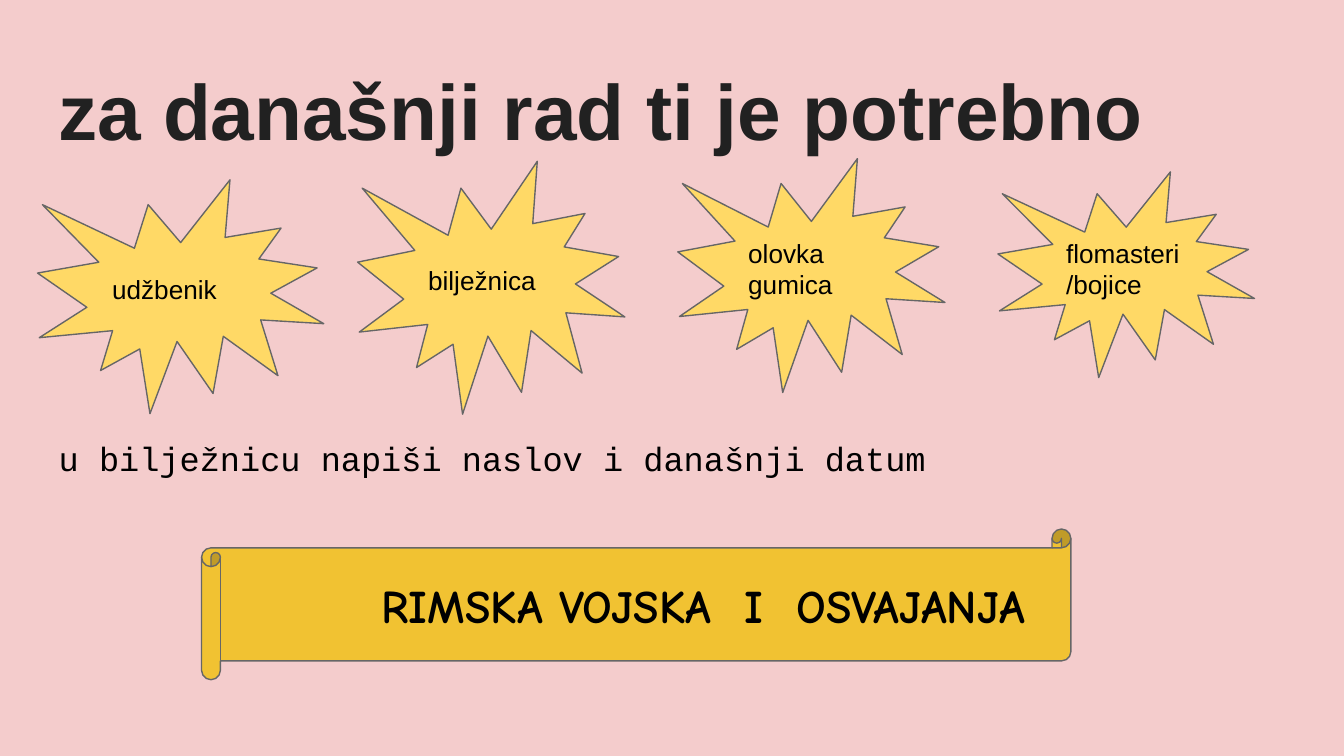
from pptx import Presentation
from pptx.dml.color import RGBColor
from pptx.enum.shapes import MSO_SHAPE
from pptx.enum.text import MSO_ANCHOR, PP_ALIGN
from pptx.util import Cm, Pt

PINK = RGBColor(0xF4, 0xCC, 0xCC)
YELLOW = RGBColor(0xFF, 0xD9, 0x66)
GOLD = RGBColor(0xF1, 0xC2, 0x32)
GREY = RGBColor(0x66, 0x66, 0x66)
DARK = RGBColor(0x21, 0x21, 0x21)
BLACK = RGBColor(0, 0, 0)

INSET = 0.25
STEP = 6.05  # distance between the left edges of the stars
# label, top, width, height in cm
ITEMS = [
    ("udžbenik", 3.4, 5.41, 4.42),
    ("bilježnica", 3.05, 5.05, 4.78),
    ("olovka\ngumica", 3.0, 5.05, 4.42),
    ("flomasteri/bojice", 3.25, 4.85, 3.89),
]


def write(shape, text, font, size, color=BLACK, bold=False,
          anchor=MSO_ANCHOR.MIDDLE, left=INSET, top=INSET):
    """Fill a shape with left-aligned text; left and top are insets in cm."""
    frame = shape.text_frame
    frame.word_wrap = True
    frame.vertical_anchor = anchor
    frame.margin_left, frame.margin_top = Cm(left), Cm(top)
    frame.margin_right = frame.margin_bottom = Cm(INSET)
    frame.text = text
    for para in frame.paragraphs:
        para.alignment = PP_ALIGN.LEFT
        para.font.name = font
        para.font.size = Pt(size)
        para.font.bold = bold
        para.font.color.rgb = color


def add_form(slide, kind, box, fill):
    form = slide.shapes.add_shape(kind, *map(Cm, box))
    form.shadow.inherit = False
    form.fill.solid()
    form.fill.fore_color.rgb = fill
    form.line.color.rgb = GREY
    form.line.width = Pt(0.75)
    return form


def add_title(slide, box):
    title = slide.shapes.add_textbox(*map(Cm, box))
    write(title, "za današnji rad ti je potrebno", "Arial", 42, DARK, True,
          MSO_ANCHOR.TOP, top=0.36)


def add_stars(slide, left):
    for i, (label, top, width, height) in enumerate(ITEMS):
        box = (left + i * STEP, top, width, height)
        star = add_form(slide, MSO_SHAPE.EXPLOSION1, box, YELLOW)
        write(star, label, "Arial", 14)


def add_task(slide, box):
    task = slide.shapes.add_textbox(*map(Cm, box))
    write(task, "u bilježnicu napiši naslov i današnji datum",
          "Courier New", 18, anchor=MSO_ANCHOR.TOP)


def add_scroll(slide, box):
    scroll = add_form(slide, MSO_SHAPE.HORIZONTAL_SCROLL, box, GOLD)
    scroll.adjustments[0] = 0.125
    write(scroll, "RIMSKA VOJSKA  I  OSVAJANJA", "Comic Neue", 25,
          bold=True, left=3.05)


def main():
    deck = Presentation()
    deck.slide_width, deck.slide_height = Cm(25.4), Cm(14.29)
    slide = deck.slides.add_slide(deck.slide_layouts[6])
    back = slide.background.fill
    back.solid()
    back.fore_color.rgb = PINK

    add_title(slide, (0.86, 0.81, 23.67, 2.24))
    add_task(slide, (0.86, 8.03, 23.67, 1.3))
    add_stars(slide, 0.71)
    add_scroll(slide, (3.81, 10, 16.43, 2.85))
    deck.save("out.pptx")


if __name__ == "__main__":
    main()
